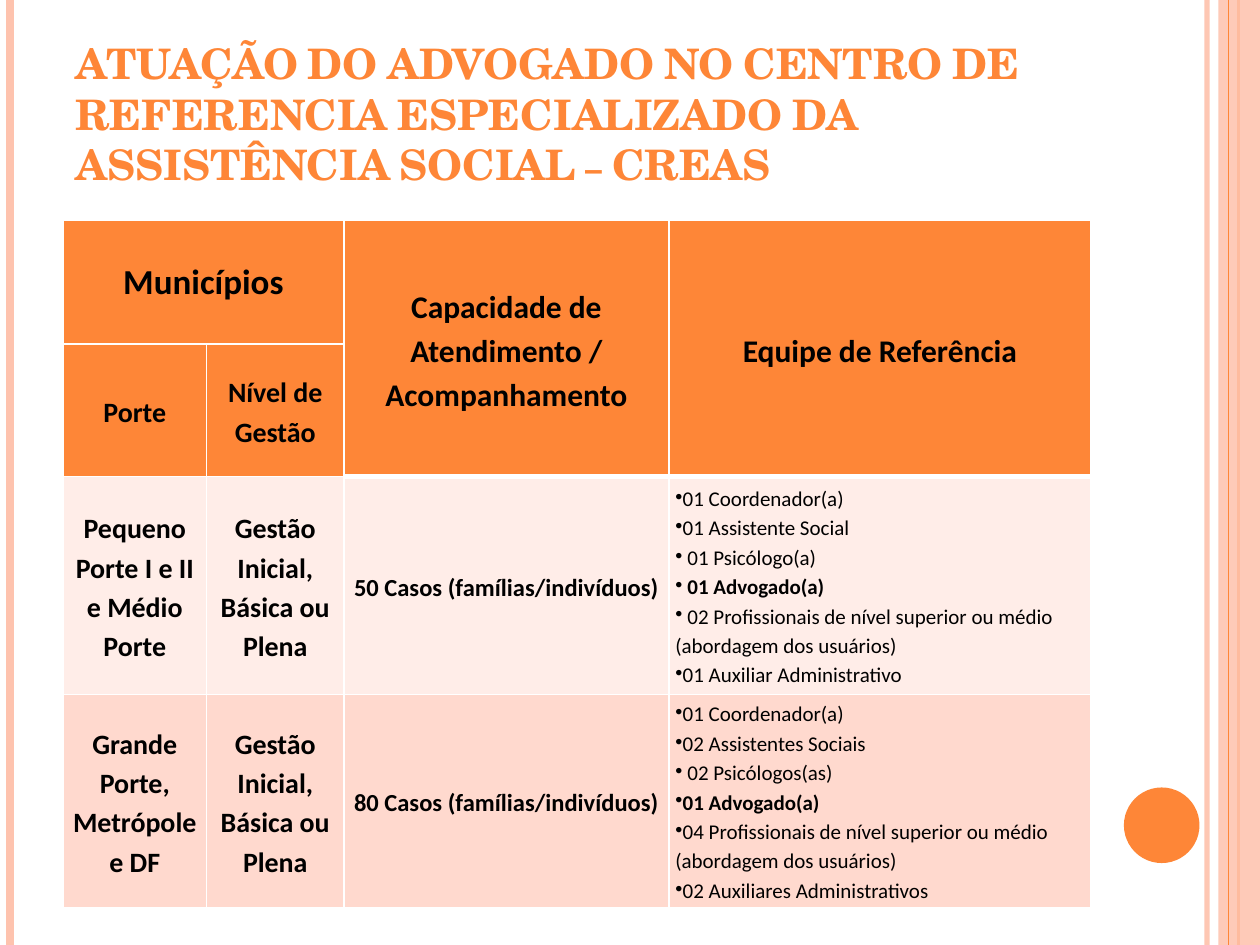
import lxml.etree
import pptx
import pptx.dml.color
import pptx.enum.shapes
import pptx.enum.text
import pptx.oxml.ns
import pptx.util

Inches = pptx.util.Inches
Pt = pptx.util.Pt
qn = pptx.oxml.ns.qn
ALIGN = pptx.enum.text.PP_ALIGN
ANCHOR = pptx.enum.text.MSO_ANCHOR
SHAPE = pptx.enum.shapes.MSO_SHAPE

ORANGE, PEACH, WHITE, BLACK = "FE8637", "FEC3AE", "FFFFFF", "000000"
WIDTHS = [1.14, 1.09, 2.58, 3.35]
HEIGHTS = [0.98, 0.64, 1.73, 1.69]
HEADS = [
    (0, 0, 0, 1, "Municípios", 20),
    (0, 2, 1, 2, "Capacidade de Atendimento / Acompanhamento", 18),
    (0, 3, 1, 3, "Equipe de Referência", 18),
    (1, 0, 1, 0, "Porte", 16),
    (1, 1, 1, 1, "Nível de Gestão", 16),
]
LEVEL = "Gestão Inicial, Básica ou Plena"
FIELD = "Profissionais de nível superior ou médio (abordagem dos usuários)"
ROWS = [
    ("FFEDE8", "Pequeno Porte I e II e Médio Porte", "50 Casos (famílias/indivíduos)",
     ["01 Coordenador(a)", "01 Assistente Social", " 01 Psicólogo(a)",
      " 01 Advogado(a)", f" 02 {FIELD}", "01 Auxiliar Administrativo"]),
    ("FFD9CE", "Grande Porte, Metrópole e DF", "80 Casos (famílias/indivíduos)",
     ["01 Coordenador(a)", "02 Assistentes Sociais", " 02 Psicólogos(as)",
      "01 Advogado(a)", f"04 {FIELD}", "02 Auxiliares Administrativos"]),
]


def paint(color, code, alpha=100):
    color.rgb = pptx.dml.color.RGBColor.from_string(code)
    if alpha < 100:
        node = color._xFill.find(qn("a:srgbClr"))
        lxml.etree.SubElement(node, qn("a:alpha"), val=str(alpha * 1000))


def set_font(font, name, size, code, bold):
    font.name, font.size, font.bold = name, Pt(size), bold
    paint(font.color, code)


def add_rule(slide, x, top, height, code, width, alpha=100):
    rule = slide.shapes.add_connector(
        pptx.enum.shapes.MSO_CONNECTOR.STRAIGHT,
        Inches(x), Inches(top), Inches(x), Inches(top + height))
    rule.line.width = Pt(width)
    rule.line.fill.solid()
    paint(rule.line.fill.fore_color, code, alpha)
    lxml.etree.SubElement(rule._element.spPr, qn("a:effectLst"))


def add_block(slide, kind, box, code, alpha=100):
    block = slide.shapes.add_shape(kind, *map(Inches, box))
    block.shadow.inherit = False
    block.fill.solid()
    paint(block.fill.fore_color, code, alpha)
    block.line.fill.background()


def add_frame(slide, left, top, width, height):
    right = left + width
    add_rule(slide, right - 0.42, top, height, PEACH, 3, 93)
    add_rule(slide, left + 0.08, top, height, PEACH, 4.5)
    add_rule(slide, right - 0.17, top, height, ORANGE, 1.5)
    add_block(slide, SHAPE.RECTANGLE, (right - 0.33, top, 0.33, height), PEACH, 87)
    add_rule(slide, right - 0.25, top, height, ORANGE, 0.75)
    add_block(slide, SHAPE.OVAL, (right - 1.08, top + height - 1.25, 0.6, 0.6), ORANGE)


def add_title(slide, left, top, width, height):
    title = slide.shapes.title
    title.left, title.top = Inches(left), Inches(top)
    title.width, title.height = Inches(width), Inches(height)
    frame = title.text_frame
    frame.auto_size = pptx.enum.text.MSO_AUTO_SIZE.NONE
    frame.word_wrap = True
    frame.vertical_anchor = ANCHOR.BOTTOM
    frame.text = ("ATUAÇÃO DO ADVOGADO NO CENTRO DE REFERENCIA "
                  "ESPECIALIZADO DA ASSISTÊNCIA SOCIAL – CREAS")
    para = frame.paragraphs[0]
    para.alignment = ALIGN.LEFT
    set_font(para.font, "TeX Gyre Schola", 24, ORANGE, True)
    para.font._element.set("cap", "small")


def style_cell(cell, code, base=1):
    props = cell._tc.get_or_add_tcPr()
    for side in "LRTB":
        width = base if side == "B" else 1
        line = lxml.etree.SubElement(props, qn(f"a:ln{side}"), w=str(Pt(width)))
        fill = lxml.etree.SubElement(line, qn("a:solidFill"))
        lxml.etree.SubElement(fill, qn("a:srgbClr"), val=WHITE)
    cell.fill.solid()
    paint(cell.fill.fore_color, code)
    cell.vertical_anchor = ANCHOR.MIDDLE
    cell.margin_left = cell.margin_right = Inches(0.05)
    cell.margin_top = cell.margin_bottom = 0


def write_head(cell, text, size):
    cell.text = text
    para = cell.text_frame.paragraphs[0]
    para.alignment = ALIGN.CENTER
    para.line_spacing = 1.15
    set_font(para.font, "Calibri", size, BLACK, True)


def write_list(cell, items):
    cell.text = "\n".join(items)
    for para in cell.text_frame.paragraphs:
        para.line_spacing = 1.15
        set_font(para.font, "Calibri", 12, BLACK, "Advogado" in para.text)
        props = para._p.get_or_add_pPr()
        props.set("marL", "0")
        props.set("indent", "0")
        mark = lxml.etree.Element(qn("a:buChar"), char="•")
        props.find(qn("a:defRPr")).addprevious(mark)


def add_grid(slide, left, top, width, height):
    table = slide.shapes.add_table(
        len(HEIGHTS), len(WIDTHS), *map(Inches, (left, top, width, height))).table
    table.first_row = table.horz_banding = False
    for col, size in zip(table.columns, WIDTHS):
        col.width = Inches(size)
    for row, size in zip(table.rows, HEIGHTS):
        row.height = Inches(size)

    for r in range(2):
        for c in range(len(WIDTHS)):
            style_cell(table.cell(r, c), ORANGE, 3 if c > 1 else 1)
    for r, c, last_r, last_c, text, size in HEADS:
        cell = table.cell(r, c)
        write_head(cell, text, size)
        if (r, c) != (last_r, last_c):
            cell.merge(table.cell(last_r, last_c))
    towns = table.cell(0, 0)
    towns.text_frame.paragraphs[0].line_spacing = 1.0
    towns.margin_left = towns.margin_right = Inches(0.1)
    towns.margin_top = towns.margin_bottom = Inches(0.05)

    for r, (code, town, cases, team) in enumerate(ROWS, 2):
        for c in range(len(WIDTHS)):
            style_cell(table.cell(r, c), code)
        for c, (text, size) in enumerate([(town, 16), (LEVEL, 16), (cases, 14)]):
            write_head(table.cell(r, c), text, size)
        write_list(table.cell(r, 3), team)


def main():
    deck = pptx.Presentation()
    deck.slide_width, deck.slide_height = Inches(10), Inches(7.5)
    slide = deck.slides.add_slide(deck.slide_layouts[5])
    add_frame(slide, 0, 0, 10, 7.5)
    add_title(slide, 0.5, 0.3, 8.17, 1.25)
    add_grid(slide, 0.5, 1.75, 8.17, 5.05)
    deck.save("out.pptx")


if __name__ == "__main__":
    main()
